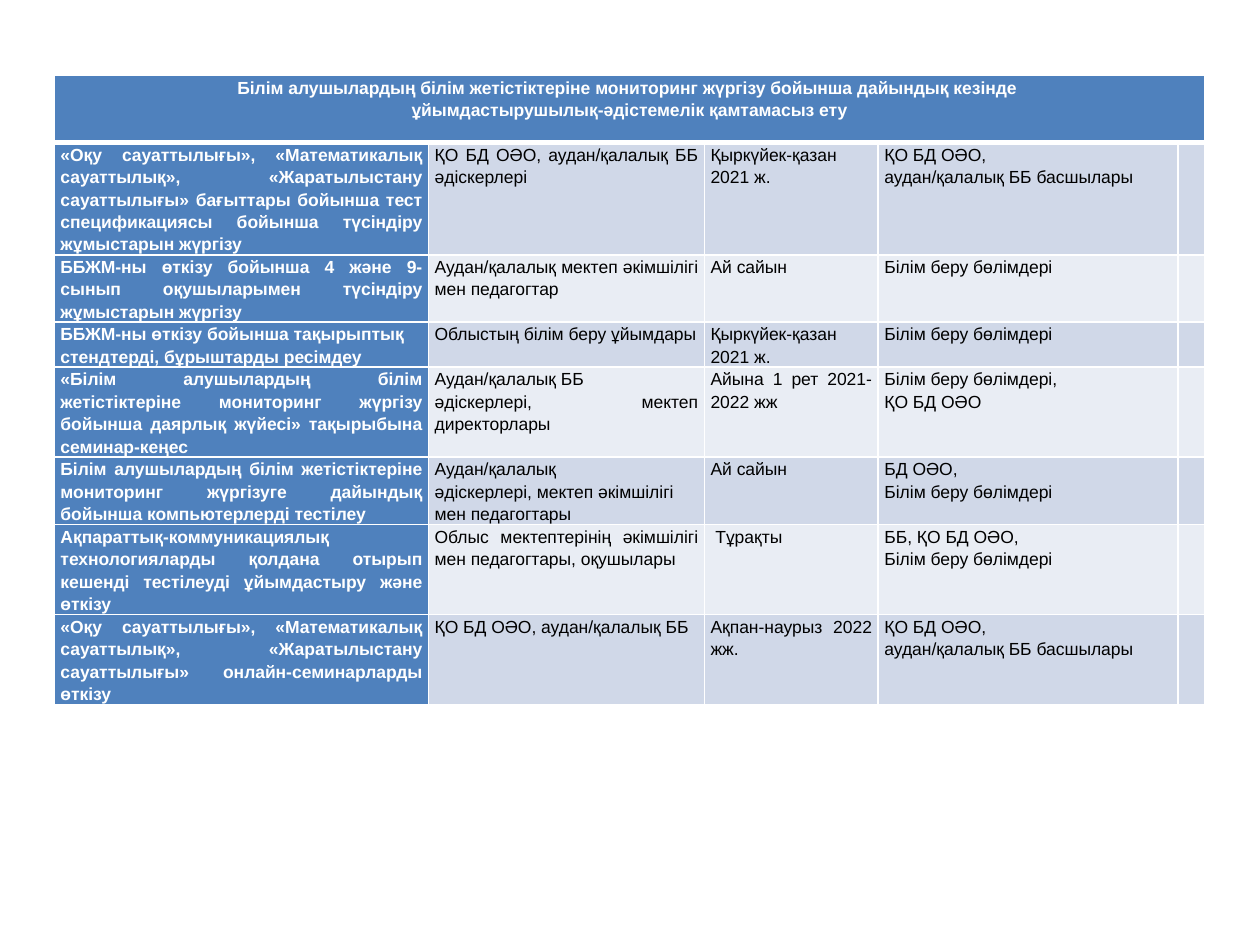
import pptx
import pptx.dml.color
import pptx.enum.text
import pptx.oxml
import pptx.oxml.ns
import pptx.util
from pptx.util import Inches

RGBColor = pptx.dml.color.RGBColor
Align = pptx.enum.text.PP_ALIGN

WHITE = RGBColor(0xFF, 0xFF, 0xFF)
BLACK = RGBColor(0, 0, 0)
BLUE = RGBColor(0x4F, 0x81, 0xBD)
BANDS = [RGBColor(0xD0, 0xD8, 0xE8), RGBColor(0xE9, 0xED, 0xF4)]

COLUMN_WIDTHS = [2.97, 2.19, 1.38, 2.38, 0.21]
ROW_HEIGHTS = [0.53, 0.83, 0.48, 0.35, 0.6, 0.48, 0.5, 0.71]

TITLE = (
    "Білім алушылардың білім жетістіктеріне мониторинг жүргізу бойынша дайындық кезінде \n"
    "ұйымдастырушылық-әдістемелік қамтамасыз ету"
)

# Activity, participants, period, responsible
PLAN = [
    ["«Оқу сауаттылығы», «Математикалық сауаттылық», «Жаратылыстану сауаттылығы» "
     "бағыттары бойынша тест спецификациясы бойынша түсіндіру жұмыстарын жүргізу",
     "ҚО БД ОӘО, аудан/қалалық ББ әдіскерлері",
     "Қыркүйек-қазан 2021 ж.",
     "ҚО БД ОӘО, \nаудан/қалалық ББ басшылары "],
    ["ББЖМ-ны өткізу бойынша 4 және 9-сынып оқушыларымен түсіндіру жұмыстарын жүргізу ",
     "Аудан/қалалық мектеп әкімшілігі мен педагогтар ",
     "Ай сайын",
     "Білім беру бөлімдері"],
    ["ББЖМ-ны өткізу бойынша тақырыптық стендтерді, бұрыштарды ресімдеу",
     "Облыстың білім беру ұйымдары",
     "Қыркүйек-қазан 2021 ж.",
     "Білім беру бөлімдері"],
    ["«Білім алушылардың білім жетістіктеріне мониторинг жүргізу бойынша даярлық "
     "жүйесі» тақырыбына семинар-кеңес",
     "Аудан/қалалық ББ\nәдіскерлері, мектеп директорлары",
     "Айына 1 рет 2021-2022 жж",
     "Білім беру бөлімдері,\nҚО БД ОӘО"],
    ["Білім алушылардың білім жетістіктеріне мониторинг жүргізуге дайындық "
     "бойынша компьютерлерді тестілеу",
     "Аудан/қалалық\nәдіскерлері, мектеп әкімшілігі мен педагогтары",
     "Ай сайын",
     "БД ОӘО,\nБілім беру бөлімдері"],
    ["Ақпараттық-коммуникациялық технологияларды қолдана отырып кешенді тестілеуді "
     "ұйымдастыру және өткізу",
     "Облыс мектептерінің әкімшілігі мен педагогтары, оқушылары ",
     " Тұрақты ",
     "ББ, ҚО БД ОӘО, \nБілім беру бөлімдері"],
    ["«Оқу сауаттылығы», «Математикалық сауаттылық», «Жаратылыстану сауаттылығы» "
     "онлайн-семинарларды өткізу ",
     "ҚО БД ОӘО, аудан/қалалық ББ",
     "Ақпан-наурыз 2022 жж.",
     "ҚО БД ОӘО, \nаудан/қалалық ББ басшылары "],
]

# Left-aligned paragraphs as (row, column, paragraph); the rest are justified
LEFT_ALIGNED = {(3, 0, 0), (3, 1, 0), (3, 2, 0), (3, 3, 0),
                (5, 1, 1), (5, 2, 0), (5, 3, 0), (5, 3, 1)}


class TableSlide:
    font_name = "Arial"
    font_size = pptx.util.Pt(10)
    line_spacing = 1.15

    def __init__(self, deck):
        self.page = deck.slides.add_slide(deck.slide_layouts[6])

    def add_table(self, left, top, widths, heights):
        frame = self.page.shapes.add_table(
            len(heights), len(widths), Inches(left), Inches(top),
            Inches(sum(widths)), Inches(sum(heights)))
        for column, width in zip(frame.table.columns, widths):
            column.width = Inches(width)
        for row, height in zip(frame.table.rows, heights):
            row.height = Inches(height)
        return frame.table

    def style_cell(self, cell, fill, bottom_width=1):
        cell.margin_left = cell.margin_right = Inches(0.05)
        cell.margin_top = cell.margin_bottom = 0
        cell.fill.solid()
        cell.fill.fore_color.rgb = fill
        properties = cell._tc.get_or_add_tcPr()
        sides = {"lnL": 1, "lnR": 1, "lnT": 1, "lnB": bottom_width}
        for position, (side, width) in enumerate(sides.items()):
            border = pptx.oxml.parse_xml(
                f'<a:{side} {pptx.oxml.ns.nsdecls("a")} w="{pptx.util.Pt(width)}">'
                f'<a:solidFill><a:srgbClr val="{WHITE}"/></a:solidFill></a:{side}>')
            properties.insert(position, border)

    def set_cell_text(self, cell, text, color, bold, alignments):
        cell.text_frame.text = text
        for para, alignment in zip(cell.text_frame.paragraphs, alignments):
            para.alignment = alignment
            para.line_spacing = self.line_spacing
            for span in para.runs:
                span.font.name = self.font_name
                span.font.size = self.font_size
                span.font.bold = bold
                span.font.color.rgb = color


def main():
    deck = pptx.Presentation()
    deck.slide_width, deck.slide_height = Inches(10), Inches(7.5)
    slide = TableSlide(deck)
    table = slide.add_table(0.43, 0.6, COLUMN_WIDTHS, ROW_HEIGHTS)

    # Heading across all columns
    last_column = len(COLUMN_WIDTHS) - 1
    for column in range(last_column + 1):
        slide.style_cell(table.cell(0, column), BLUE, bottom_width=3)
    table.cell(0, 0).merge(table.cell(0, last_column))
    slide.set_cell_text(table.cell(0, 0), TITLE, WHITE, True, [Align.CENTER] * 2)

    # Plan rows: blue first column, banded others, empty last column
    for row, texts in enumerate(PLAN, start=1):
        band = BANDS[(row - 1) % 2]
        for column in range(last_column + 1):
            slide.style_cell(table.cell(row, column), band if column else BLUE)
        for column, text in enumerate(texts):
            alignments = [
                Align.LEFT if (row, column, number) in LEFT_ALIGNED else Align.JUSTIFY
                for number in range(text.count("\n") + 1)]
            slide.set_cell_text(table.cell(row, column), text,
                                BLACK if column else WHITE, column == 0, alignments)

    deck.save("out.pptx")


if __name__ == "__main__":
    main()
